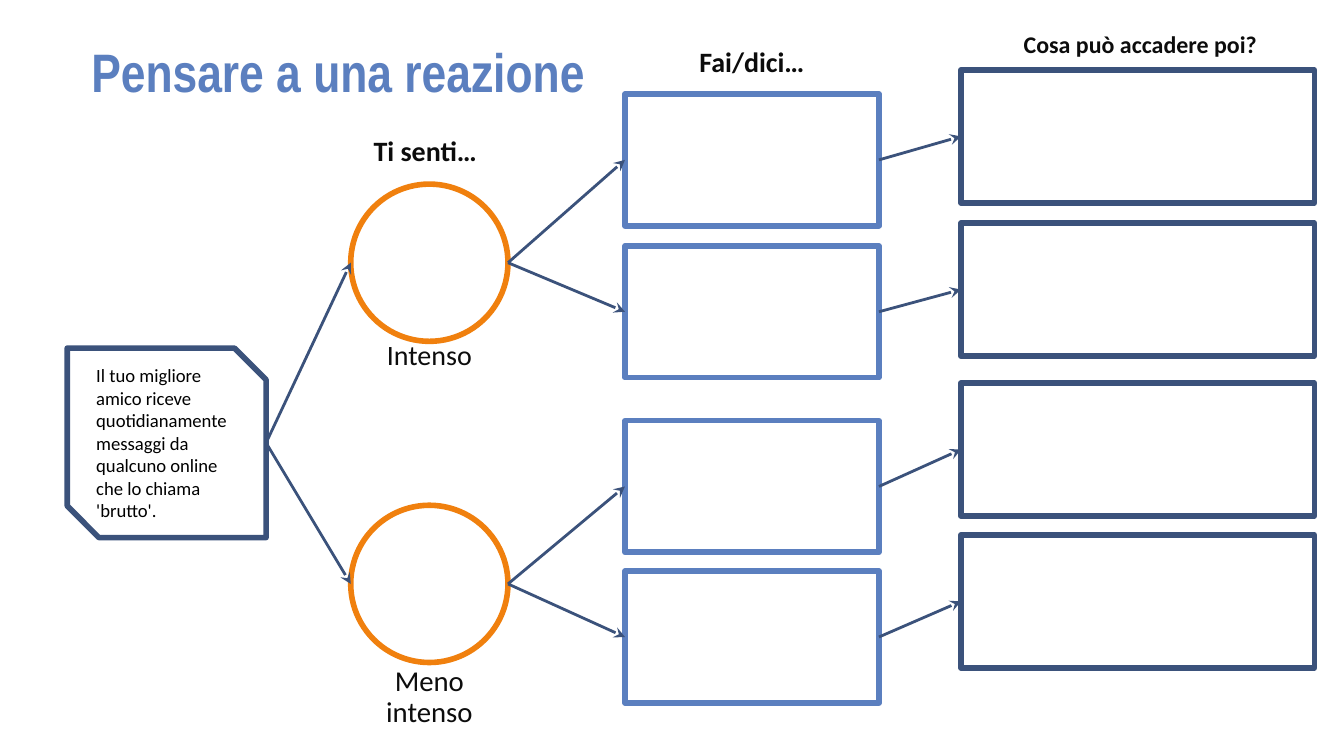
from lxml.etree import SubElement
from pptx import Presentation
from pptx.dml.color import RGBColor
from pptx.enum.shapes import MSO_CONNECTOR, MSO_SHAPE
from pptx.enum.text import MSO_ANCHOR, PP_ALIGN
from pptx.oxml.ns import qn
from pptx.util import Inches, Pt

COLORS = {"navy": "3B527B", "blue": "5B7FBF", "orange": "F0800E",
          "text": "0C0C0C", "black": "000000"}
LEFT_SITE, RIGHT_SITE = 1, 3


def color(name):
    return RGBColor.from_string(COLORS[name])


def write_text(shape, text, size, color_name="text", bold=False, font="Calibri",
               align=PP_ALIGN.CENTER, anchor=MSO_ANCHOR.TOP,
               spacing=0.9, insets=(0.07, 0.04)):
    frame = shape.text_frame
    frame.word_wrap = True
    frame.vertical_anchor = anchor
    frame.margin_left = frame.margin_right = Inches(insets[0])
    frame.margin_top = frame.margin_bottom = Inches(insets[1])
    paragraph = frame.paragraphs[0]
    paragraph.text = text
    paragraph.alignment = align
    paragraph.line_spacing = spacing
    paragraph.font.name = font
    paragraph.font.size = Pt(size)
    paragraph.font.bold = bold
    paragraph.font.color.rgb = color(color_name)


def add_label(slide, text, box, size, **style):
    shape = slide.shapes.add_textbox(*map(Inches, box))
    write_text(shape, text, size, **style)


def add_outline(slide, preset, box, line_color):
    shape = slide.shapes.add_shape(preset, *map(Inches, box))
    shape.shadow.inherit = False
    shape.fill.background()
    shape.line.color.rgb = color(line_color)
    shape.line.width = Pt(3)
    return shape


def add_arrow(slide, source, target):
    """Draw an arrow from the right side of source to the left side of target."""
    connector = slide.shapes.add_connector(
        MSO_CONNECTOR.STRAIGHT,
        source.left + source.width, source.top + source.height // 2,
        target.left, target.top + target.height // 2)
    if source.auto_shape_type == MSO_SHAPE.RECTANGLE:
        connector.begin_connect(source, RIGHT_SITE)
    if target.auto_shape_type == MSO_SHAPE.RECTANGLE:
        connector.end_connect(target, LEFT_SITE)
    connector.line.color.rgb = color("navy")
    connector.line.width = Pt(1.5)
    line = connector._element.spPr.find(qn("a:ln"))
    SubElement(line, qn("a:tailEnd"), type="stealth")
    SubElement(connector._element.spPr, qn("a:effectLst"))


def add_column(slide, preset, left, tops, size, line_color):
    return [add_outline(slide, preset, (left, top, *size), line_color) for top in tops]


def main():
    presentation = Presentation()
    presentation.slide_width = Inches(10)
    presentation.slide_height = Inches(10) * 9 // 16
    slide = presentation.slides.add_slide(presentation.slide_layouts[6])

    # Title and column headings
    add_label(slide, "Pensare a una reazione", (0.61, 0.22, 8.77, 0.67), 29,
              color_name="blue", bold=True, font="Arial Narrow",
              align=PP_ALIGN.LEFT, anchor=MSO_ANCHOR.MIDDLE)
    add_label(slide, "Ti senti…", (2.71, 0.98, 0.97, 0.42), 15,
              bold=True, align=PP_ALIGN.LEFT)
    add_label(slide, "Fai/dici…", (5.01, 0.32, 1.17, 0.33), 15, bold=True)
    add_label(slide, "Cosa può accadere poi?", (7.52, 0.22, 1.93, 0.26), 12.8,
              bold=True, spacing=0.8)

    # Starting situation
    situation = add_outline(slide, MSO_SHAPE.SNIP_2_DIAG_RECTANGLE,
                            (0.5, 2.59, 1.48, 1.41), "navy")
    situation.adjustments[0] = 0
    situation.adjustments[1] = 0.167
    write_text(situation, "Il tuo migliore amico riceve quotidianamente messaggi "
               "da qualcuno online che lo chiama 'brutto'.", 10, color_name="black",
               align=PP_ALIGN.LEFT, anchor=MSO_ANCHOR.MIDDLE,
               spacing=1.0, insets=(0.1, 0.1))

    # Feelings, reactions and consequences
    feelings = add_column(slide, MSO_SHAPE.OVAL, 2.61, (1.37, 3.76),
                          (1.17, 1.17), "orange")
    reactions = add_column(slide, MSO_SHAPE.RECTANGLE, 4.65, (0.7, 1.83, 3.13, 4.25),
                           (1.89, 0.98), "blue")
    consequences = add_column(slide, MSO_SHAPE.RECTANGLE, 7.15, (0.52, 1.66, 2.85, 3.98),
                              (2.63, 0.99), "navy")
    add_label(slide, "Intenso", (2.71, 2.54, 0.97, 0.26), 15, spacing=0.7)
    add_label(slide, "Meno intenso", (2.71, 4.92, 0.97, 0.26), 15.4)

    # Arrows: each feeling leads to two reactions, each reaction to one consequence
    for feeling in feelings:
        add_arrow(slide, situation, feeling)
    for index, (reaction, consequence) in enumerate(zip(reactions, consequences)):
        add_arrow(slide, feelings[index // 2], reaction)
        add_arrow(slide, reaction, consequence)

    presentation.save("out.pptx")


if __name__ == "__main__":
    main()
